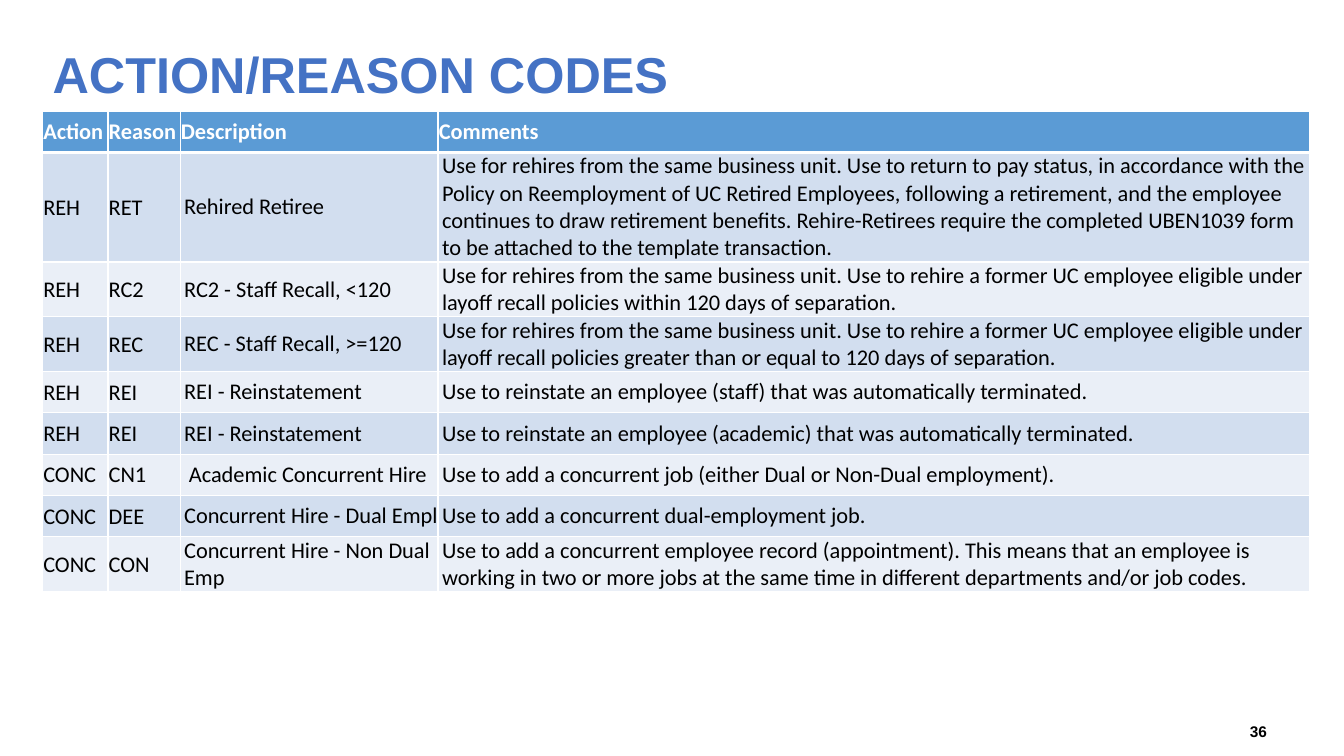
import pptx
import pptx.dml.color
import pptx.enum.text
import pptx.oxml
import pptx.oxml.ns
import pptx.util
from dataclasses import dataclass

Cm, Pt = pptx.util.Cm, pptx.util.Pt
ALIGN = pptx.enum.text.PP_ALIGN
MIDDLE = pptx.enum.text.MSO_ANCHOR.MIDDLE


@dataclass(frozen=True)
class Theme:
    heading_font: str = "Arial"
    body_font: str = "Calibri"
    title: str = "4472C4"
    header: str = "5B9BD5"
    bands: tuple = ("D2DEEF", "EAEFF7")
    light: str = "FFFFFF"
    dark: str = "000000"
    title_size: int = 36
    table_size: int = 16
    number_size: int = 11


class SlideBuilder:
    def __init__(self, slide, theme):
        self.s = slide
        self.theme = theme

    def add_text(self, p, text, font, size, color, bold=False, align=ALIGN.LEFT):
        p.alignment = align
        r = p.add_run()
        r.text = text
        r.font.name, r.font.size, r.font.bold = font, Pt(size), bold
        r.font.color.rgb = pptx.dml.color.RGBColor.from_string(color)

    def title(self, text, box):
        t = self.theme
        sp = self.s.shapes.title
        sp.left, sp.top, sp.width, sp.height = map(Cm, box)
        tf = sp.text_frame
        tf.vertical_anchor = MIDDLE
        self.add_text(tf.paragraphs[0], text, t.heading_font, t.title_size, t.title, True)

    def page_number(self, text, box):
        t = self.theme
        tf = self.s.shapes.add_textbox(*map(Cm, box)).text_frame
        tf.word_wrap = True
        tf.vertical_anchor = MIDDLE
        self.add_text(tf.paragraphs[0], text, t.heading_font, t.number_size, t.dark,
                      True, ALIGN.RIGHT)

    def borders(self, cell, top, bottom):
        tcPr = cell._tc.get_or_add_tcPr()
        for side, width in (("L", 1), ("R", 1), ("T", top), ("B", bottom)):
            tcPr.append(pptx.oxml.parse_xml(
                f'<a:ln{side} {pptx.oxml.ns.nsdecls("a")} w="{Pt(width)}"><a:solidFill>'
                f'<a:srgbClr val="{self.theme.light}"/></a:solidFill></a:ln{side}>'))

    def cell(self, cell, text, fill, color, bold, inset, indent, top, bottom):
        t = self.theme
        self.borders(cell, top, bottom)
        cell.fill.solid()
        cell.fill.fore_color.rgb = pptx.dml.color.RGBColor.from_string(fill)
        cell.vertical_anchor = MIDDLE
        cell.margin_left = cell.margin_right = cell.margin_top = Cm(inset)
        cell.margin_bottom = 0
        p = cell.text_frame.paragraphs[0]
        p._p.get_or_add_pPr().set("marL", str(Cm(indent)))
        self.add_text(p, text, t.body_font, t.table_size, color, bold)

    def table(self, rows, left, top, widths, row_height, indents):
        t = self.theme
        tbl = self.s.shapes.add_table(
            len(rows), len(widths), Cm(left), Cm(top),
            Cm(sum(widths)), Cm(row_height * len(rows))).table
        for column, width in zip(tbl.columns, widths):
            column.width = Cm(width)
        for i, row in enumerate(rows):
            tbl.rows[i].height = Cm(row_height)
            head = i == 0
            for j, text in enumerate(row):
                wide = j >= 2 and not head
                self.cell(
                    tbl.cell(i, j), text,
                    fill=t.header if head else t.bands[(i - 1) % 2],
                    color=t.light if head else t.dark,
                    bold=head,
                    inset=0 if wide else 0.02,
                    indent=indents.get(text, 0.1) if wide else 0,
                    top=3 if i == 1 else 1,
                    bottom=3 if head else 1)


# Table content
SAME_UNIT = "Use for rehires from the same business unit. "
RECALL = (SAME_UNIT + "Use to rehire a former UC employee eligible under layoff recall "
          "policies {} 120 days of separation.")
REINSTATE = "Use to reinstate an employee ({}) that was automatically terminated."
ACADEMIC = "Academic Concurrent Hire"

CODES = [
    ("Action", "Reason", "Description", "Comments"),
    ("REH", "RET", "Rehired Retiree",
     SAME_UNIT + "Use to return to pay status, in accordance with the Policy on "
     "Reemployment of UC Retired Employees, following a retirement, and the employee "
     "continues to draw retirement benefits. Rehire-Retirees require the completed "
     "UBEN1039 form to be attached to the template transaction."),
    ("REH", "RC2", "RC2 - Staff Recall, <120", RECALL.format("within")),
    ("REH", "REC", "REC - Staff Recall, >=120",
     RECALL.format("greater than or equal to")),
    ("REH", "REI", "REI - Reinstatement", REINSTATE.format("staff")),
    ("REH", "REI", "REI - Reinstatement", REINSTATE.format("academic")),
    ("CONC", "CN1", ACADEMIC,
     "Use to add a concurrent job (either Dual or Non-Dual employment)."),
    ("CONC", "DEE", "Concurrent Hire - Dual Empl",
     "Use to add a concurrent dual-employment job."),
    ("CONC", "CON", "Concurrent Hire - Non Dual Emp",
     "Use to add a concurrent employee record (appointment). This means that an "
     "employee is working in two or more jobs at the same time in different "
     "departments and/or job codes."),
]


def main():
    prs = pptx.Presentation()
    prs.slide_width, prs.slide_height = Cm(33.87), Cm(19.05)
    title_only = prs.slide_layouts[5]
    page = SlideBuilder(prs.slides.add_slide(title_only), Theme())

    # Title, code table and page number
    page.title("ACTION/REASON CODES", (1.07, 0.89, 30.45, 1.9))
    page.table(CODES, left=1.07, top=2.8, widths=(1.65, 1.82, 6.5, 21.97),
               row_height=1.04, indents={ACADEMIC: 0.22})
    page.page_number("36", (24.28, 18.01, 7.9, 0.84))

    prs.save("out.pptx")


if __name__ == "__main__":
    main()
